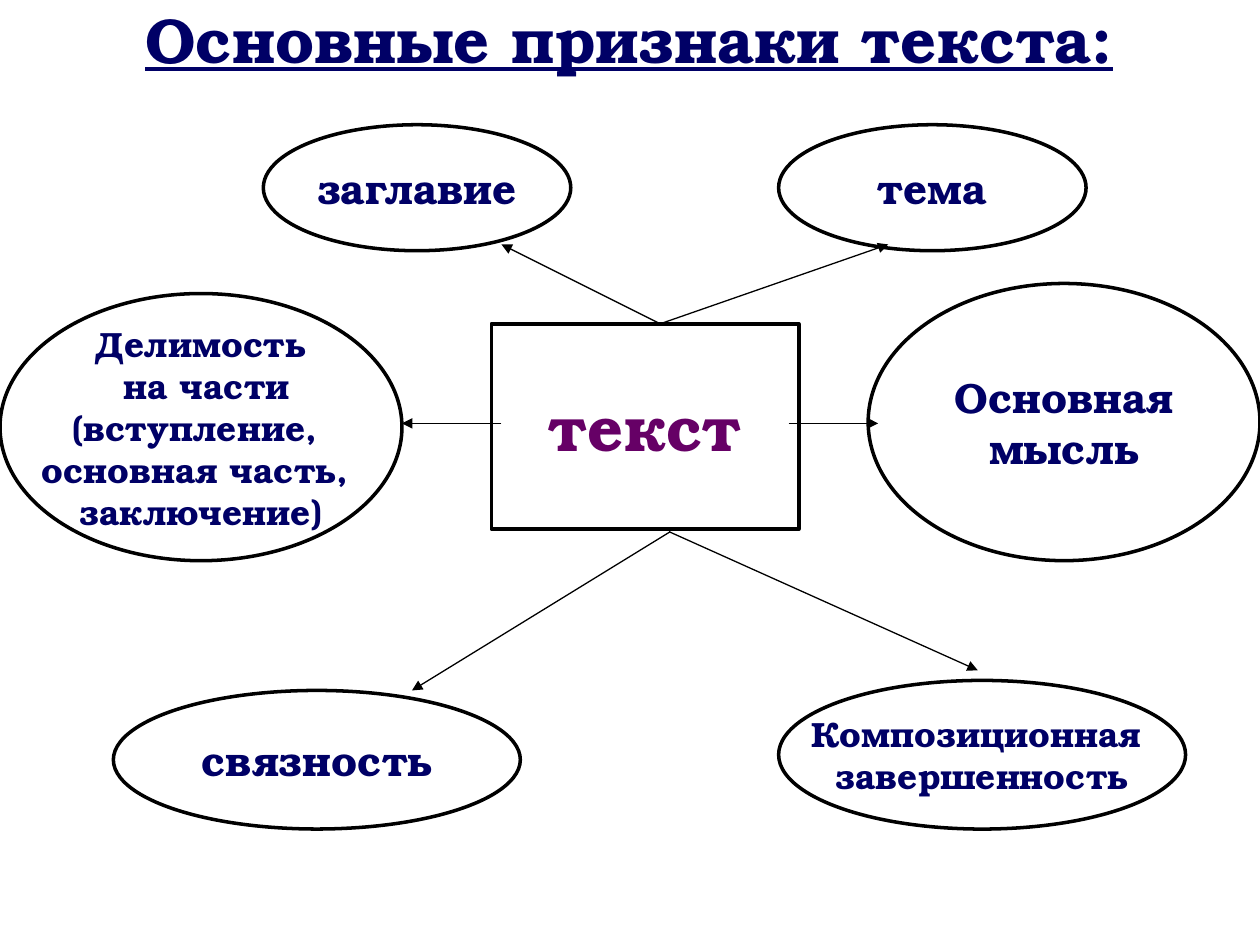
"""Build a slide that maps the main features of a text around a central box."""
from lxml import etree
from pptx import Presentation, util as u
from pptx.dml.color import RGBColor
from pptx.enum import shapes as es, text as et
from pptx.oxml import ns

deck = Presentation()
deck.slide_width, deck.slide_height = u.Inches(10), u.Inches(7.5)
slide = deck.slides.add_slide(deck.slide_layouts[6])
items = slide.shapes
cell = deck.slide_width / 100
hue = RGBColor.from_string
navy, plum, black, white = "000066", "660066", "000000", "FFFFFF"


def grid(*nums):
    return [u.Emu(round(n * cell)) for n in nums]


def write(shape, words, size, color, **form):
    frame = shape.text_frame
    frame.text = words
    frame.word_wrap = False
    frame.vertical_anchor = et.MSO_ANCHOR.MIDDLE
    for para in frame.paragraphs:
        para.alignment = et.PP_ALIGN.CENTER
        font = para.runs[0].font
        font.color.rgb = hue(color)
        look = {"name": "TeX Gyre Bonum", "size": u.Pt(size), "bold": True}
        for key, val in {**look, **form}.items():
            setattr(font, key, val)


title = items.add_textbox(*grid(5, 0, 89.9, 11.5))
write(title, "Основные признаки текста:", 36, navy, underline=True)
for key, val in {"margin_top": 0, "word_wrap": True,
                 "vertical_anchor": et.MSO_ANCHOR.TOP}.items():
    setattr(title.text_frame, key, val)

box, oval = es.MSO_SHAPE.RECTANGLE, es.MSO_SHAPE.OVAL
parts = "Делимость\n на части\n(вступление, \nосновная часть, \nзаключение)"
nodes = [
    (box, (39, 25.7, 24.4, 16.3), "текст", 36, plum),
    (oval, (9, 54.8, 32.3, 11), "связность", 24, navy),
    (oval, (61.8, 54, 32.3, 11.8), "Композиционная \nзавершенность", 20, navy),
    (oval, (0, 23.3, 31.9, 21.2), parts, 20, navy),
    (oval, (68.9, 22.5, 31.1, 22), "Основная\nмысль", 24, navy),
    (oval, (20.9, 9.9, 24.4, 10), "заглавие", 24, navy),
    (oval, (61.8, 9.9, 24.4, 10), "тема", 24, navy),
]
for kind, spot, words, size, color in nodes:
    node = items.add_shape(kind, *grid(*spot))
    node.shadow.inherit = False
    node.fill.solid()
    node.fill.fore_color.rgb = hue(white)
    node.line.color.rgb = hue(black)
    node.line.width = u.Pt(2)
    write(node, words, size, color)

rays = [
    (53.2, 42.2, 32.7, 54.8),
    (53.1, 42.2, 77.6, 53.2),
    (39.8, 33.6, 31.9, 33.6),
    (62.6, 33.6, 69.7, 33.6),
    (52.4, 25.7, 70.5, 19.4),
    (52.4, 25.7, 39.8, 19.4),
]
for ends in rays:
    ray = items.add_connector(es.MSO_CONNECTOR.STRAIGHT, *grid(*ends))
    ray.line.color.rgb = hue(black)
    ray.line.width = u.Pt(0.75)
    etree.SubElement(ray.line._get_or_add_ln(), ns.qn("a:tailEnd"), type="triangle")
    etree.SubElement(ray._element.spPr, ns.qn("a:effectLst"))

deck.save("out.pptx")
